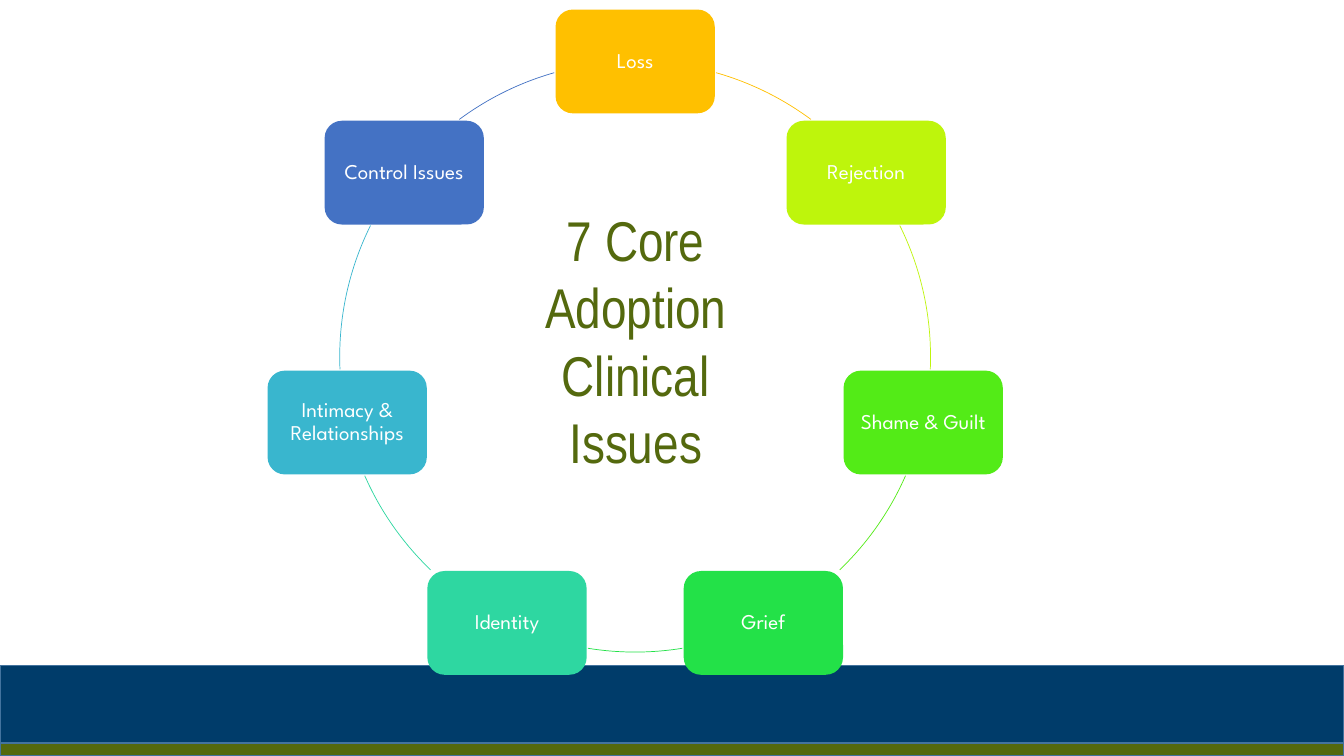
from math import cos, radians, sin

from pptx import Presentation
from pptx.dml.color import RGBColor
from pptx.enum.shapes import MSO_SHAPE as Preset
from pptx.enum.text import MSO_ANCHOR as Anchor, MSO_AUTO_SIZE as AutoSize, PP_ALIGN as Align
from pptx.util import Inches, Pt

TITLE = "7 Core Adoption Clinical Issues"
ISSUES = [
    ("Loss", "gold"),
    ("Rejection", "lime"),
    ("Shame & Guilt", "leaf"),
    ("Grief", "green"),
    ("Identity", "mint"),
    ("Intimacy & Relationships", "aqua"),
    ("Control Issues", "blue"),
]
COLORS = {
    "gold": "FFC000", "lime": "BEF50C", "leaf": "53EB17", "green": "23E148",
    "mint": "2ED7A1", "aqua": "39B6CE", "blue": "4472C4",
    "olive": "54690E", "navy": "003C6A", "edge": "43739E", "white": "FFFFFF",
}
WIDTH, HEIGHT = 13.33, 7.5
BARS = [("olive", 7.37, 0.13), ("navy", 6.6, 0.77)]
CENTER_X, CENTER_Y, RADIUS = 6.3, 3.54, 2.93
BOX_WIDTH, BOX_HEIGHT, GAP = 1.58, 1.03, 0.01
STEP = 360 / len(ISSUES)
ARC_UNITS_PER_DEGREE = 0.6


def color(name):
    return RGBColor.from_string(COLORS[name])


def write_text(shape, text, font, size, ink, margin=(0.1, 0.05), spacing=1.0, anchor=Anchor.MIDDLE):
    frame = shape.text_frame
    frame.text = text
    frame.word_wrap = True
    frame.auto_size = AutoSize.NONE
    frame.vertical_anchor = anchor
    frame.margin_left = frame.margin_right = Inches(margin[0])
    frame.margin_top = frame.margin_bottom = Inches(margin[1])
    paragraph = frame.paragraphs[0]
    paragraph.alignment = Align.CENTER
    paragraph.line_spacing = spacing
    paragraph.space_before = Pt(0)
    paragraph.font.name = font
    paragraph.font.size = Pt(size)
    paragraph.font.color.rgb = color(ink)


def add_preset(slide, preset, left, top, width, height, fill=None, line=None, weight=1):
    shape = slide.shapes.add_shape(preset, *map(Inches, (left, top, width, height)))
    shape.shadow.inherit = False
    if fill:
        shape.fill.solid()
        shape.fill.fore_color.rgb = color(fill)
    else:
        shape.fill.background()
    if line:
        shape.line.color.rgb = color(line)
        shape.line.width = Pt(weight)
    else:
        shape.line.fill.background()
    return shape


def ring_point(angle):
    return RADIUS * cos(radians(angle)), RADIUS * sin(radians(angle))


def clear_angle(angle, direction):
    box_x, box_y = ring_point(angle)
    while True:
        angle += direction * 0.1
        x, y = ring_point(angle)
        if abs(x - box_x) > BOX_WIDTH / 2 + GAP or abs(y - box_y) > BOX_HEIGHT / 2 + GAP:
            return angle % 360


def add_issue(slide, index, text, fill):
    angle = index * STEP - 90
    x, y = ring_point(angle)
    box = add_preset(slide, Preset.ROUNDED_RECTANGLE, CENTER_X + x - BOX_WIDTH / 2,
                     CENTER_Y + y - BOX_HEIGHT / 2, BOX_WIDTH, BOX_HEIGHT, fill)
    write_text(box, text, "League Spartan", 15, "white", margin=(0.06, 0.06), spacing=0.9)
    arc = add_preset(slide, Preset.ARC, CENTER_X - RADIUS, CENTER_Y - RADIUS,
                     2 * RADIUS, 2 * RADIUS, line=fill, weight=0.5)
    arc.adjustments[0] = clear_angle(angle, 1) * ARC_UNITS_PER_DEGREE
    arc.adjustments[1] = clear_angle(angle + STEP, -1) * ARC_UNITS_PER_DEGREE


def main():
    presentation = Presentation()
    presentation.slide_width, presentation.slide_height = Inches(WIDTH), Inches(HEIGHT)
    slide = presentation.slides.add_slide(presentation.slide_layouts[5])
    for fill, top, height in BARS:
        add_preset(slide, Preset.RECTANGLE, 0, top, WIDTH, height, fill, "edge")
    for index, (text, fill) in enumerate(ISSUES):
        add_issue(slide, index, text, fill)
    title = slide.shapes.title
    title.left, title.top, title.width, title.height = map(Inches, (4.93, 1.99, 2.75, 2.79))
    write_text(title, TITLE, "Arial Narrow", 40, "olive", anchor=Anchor.TOP)
    presentation.save("out.pptx")


if __name__ == "__main__":
    main()
